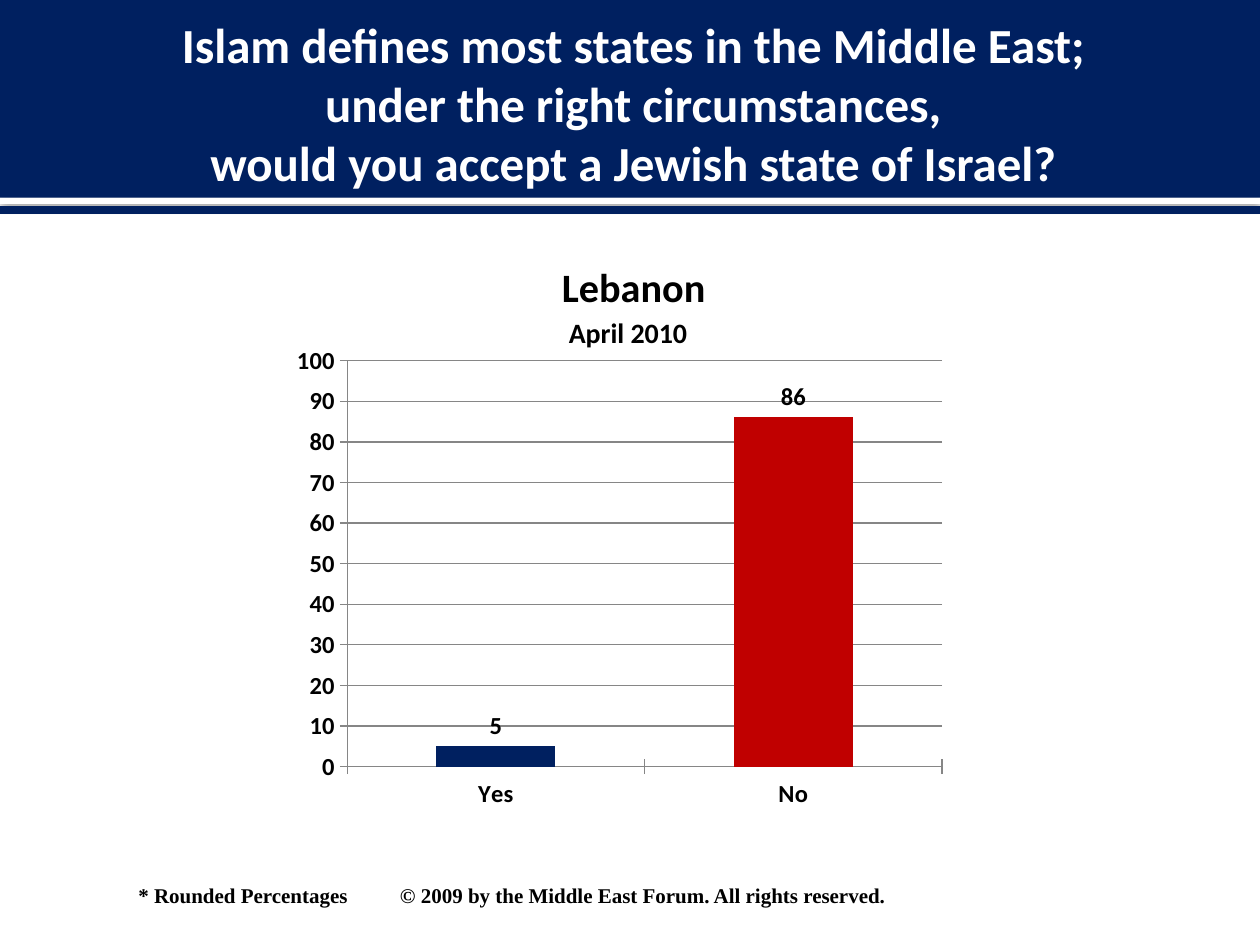
import pptx
import pptx.chart.data
import pptx.dml.color
import pptx.enum.chart
import pptx.enum.shapes
import pptx.enum.text
import pptx.oxml
import pptx.oxml.ns
import pptx.util
from pptx.dml.color import RGBColor
from pptx.util import Pt

# Content
QUESTION = ["Islam defines most states in the Middle East;",
            "under the right circumstances,",
            "would you accept a Jewish state of Israel?"]
COUNTRY = "Lebanon"
DATE = "April 2010"
FOOTNOTE = "* Rounded Percentages\t© 2009 by the Middle East Forum. All rights reserved."

NAVY = RGBColor(0x00, 0x20, 0x60)
RED = RGBColor(0xC0, 0x00, 0x00)
GRAY = RGBColor(0x86, 0x86, 0x86)
BLACK = RGBColor(0x00, 0x00, 0x00)
WHITE = RGBColor(0xFF, 0xFF, 0xFF)

ANSWERS = [("Yes", 5, NAVY), ("No", 86, RED)]

WIDTH, HEIGHT = 720, 540
BANNER_HEIGHT = 113
RULE_Y = 120.25
FOOTNOTE_TAB = 149.5
DRAWING_NS = pptx.oxml.ns.nsdecls("a")


def drawing_xml(xml):
    return pptx.oxml.parse_xml(xml.replace("NS", DRAWING_NS, 1))


def style_font(font, size, color=BLACK, name="Calibri"):
    font.size, font.bold, font.name = Pt(size), True, name
    font.color.rgb = color


def write(shape, text, *, size, color=BLACK, font="Calibri", align=None,
          anchor="TOP", margins=(7.2, 3.6, 7.2, 3.6), wrap=True, tab=None):
    frame = shape.text_frame
    frame.word_wrap = wrap
    fit = pptx.enum.text.MSO_AUTO_SIZE
    frame.auto_size = fit.NONE if wrap else fit.SHAPE_TO_FIT_TEXT
    frame.vertical_anchor = pptx.enum.text.MSO_ANCHOR[anchor]
    (frame.margin_left, frame.margin_top,
     frame.margin_right, frame.margin_bottom) = map(Pt, margins)
    paragraph = frame.paragraphs[0]
    if tab:
        paragraph._p.get_or_add_pPr().append(drawing_xml(
            f'<a:tabLst NS><a:tab pos="{Pt(tab)}" algn="l"/></a:tabLst>'))
    if align:
        paragraph.alignment = pptx.enum.text.PP_ALIGN[align]
    for number, line in enumerate(text.split("\n")):
        if number:
            paragraph.add_line_break()
        run = paragraph.add_run()
        run.text = line
        style_font(run.font, size, color, font)


def add_band(slide, top, height, color):
    band = slide.shapes.add_shape(pptx.enum.shapes.MSO_SHAPE.RECTANGLE,
                                  0, Pt(top), Pt(WIDTH), Pt(height))
    band.shadow.inherit = False
    band.fill.solid()
    band.fill.fore_color.rgb = color
    band.line.fill.background()
    return band


def add_text(slide, left, top, width, height, text, **style):
    box = slide.shapes.add_textbox(Pt(left), Pt(top), Pt(width), Pt(height))
    write(box, text, **style)


def add_header(slide):
    # White strip with a soft shadow, navy banner, navy rule
    strip = add_band(slide, BANNER_HEIGHT, 3.6, WHITE)
    effects = strip._element.spPr.find(pptx.oxml.ns.qn("a:effectLst"))
    effects.append(drawing_xml(
        f'<a:outerShdw NS blurRad="{Pt(5)}" dist="{Pt(0.8)}" dir="5400000" '
        'rotWithShape="0"><a:srgbClr val="000000"><a:alpha val="60000"/>'
        '</a:srgbClr></a:outerShdw>'))
    add_band(slide, 0, BANNER_HEIGHT, NAVY)
    rule = slide.shapes.add_connector(pptx.enum.shapes.MSO_CONNECTOR.STRAIGHT,
                                      0, Pt(RULE_Y), Pt(WIDTH), Pt(RULE_Y))
    rule.line.color.rgb = NAVY
    rule.line.width = Pt(4.5)
    rule._element.spPr.append(drawing_xml("<a:effectLst NS/>"))

    # Title, moved in front of the banner
    title = slide.shapes.title
    title.left, title.top, title.width, title.height = 0, Pt(9.4), Pt(WIDTH), Pt(98.6)
    write(title, "\n".join(QUESTION), size=28, color=WHITE, align="CENTER",
          anchor="MIDDLE", margins=(7.2, 3.6, 3.6, 3.6))
    slide.shapes._spTree.append(title._element)


def add_answer_chart(slide):
    answers = pptx.chart.data.CategoryChartData()
    answers.categories = [answer for answer, _, _ in ANSWERS]
    answers.add_series("Series 1", [percent for _, percent, _ in ANSWERS])
    chart = slide.shapes.add_chart(
        pptx.enum.chart.XL_CHART_TYPE.COLUMN_CLUSTERED,
        Pt(162), Pt(192), Pt(384), Pt(276), answers).chart
    chart.has_legend = chart.has_title = False
    style_font(chart.font, 14)

    # Bars and their values
    plot = chart.plots[0]
    plot.gap_width = 150
    plot.vary_by_categories = False
    bars = plot.series[0]
    bars.format.fill.solid()
    bars.format.fill.fore_color.rgb = NAVY
    for index, (_, _, color) in enumerate(ANSWERS):
        fill = bars.points[index].format.fill
        fill.solid()
        fill.fore_color.rgb = color
    plot.has_data_labels = True
    labels = plot.data_labels
    labels.show_value = True
    labels.position = pptx.enum.chart.XL_LABEL_POSITION.OUTSIDE_END
    style_font(labels.font, 14)

    # Axes
    scale = chart.value_axis
    scale.minimum_scale, scale.maximum_scale, scale.major_unit = 0, 100, 10
    scale.has_major_gridlines = True
    for axis in (scale, chart.category_axis):
        axis.major_tick_mark = pptx.enum.chart.XL_TICK_MARK.CROSS
        axis.format.line.color.rgb = GRAY
    scale.major_gridlines.format.line.color.rgb = GRAY


def main():
    deck = pptx.Presentation()
    deck.slide_width, deck.slide_height = Pt(WIDTH), Pt(HEIGHT)
    slide = deck.slides.add_slide(deck.slide_layouts.get_by_name("Title Only"))
    add_header(slide)
    add_answer_chart(slide)
    add_text(slide, 18, 134, 684, 56, COUNTRY, size=23, align="CENTER",
             anchor="MIDDLE", margins=(11.5, 7.2, 7.2, 3.6))
    add_text(slide, 72, 501, 446.4, 44, FOOTNOTE, size=12,
             font="Times New Roman", wrap=False, tab=FOOTNOTE_TAB)
    add_text(slide, 318, 177, 83.5, 26.6, DATE, size=16, wrap=False)
    deck.save("out.pptx")


if __name__ == "__main__":
    main()
